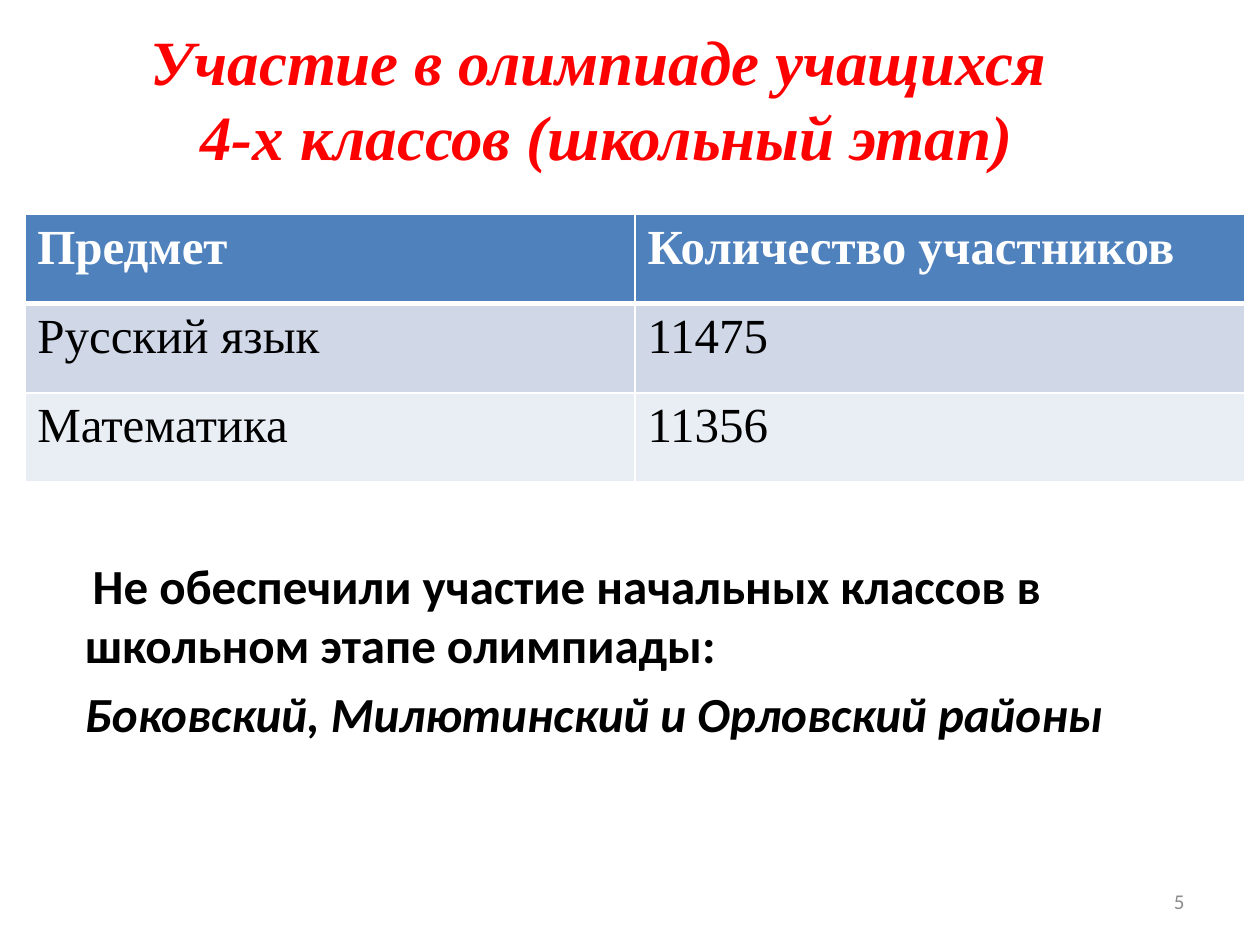
from lxml import etree
from pptx import Presentation
from pptx.dml.color import RGBColor
from pptx.enum.text import MSO_ANCHOR, PP_ALIGN
from pptx.oxml.ns import qn
from pptx.util import Cm, Pt

MIDDLE = MSO_ANCHOR.MIDDLE
CENTER, RIGHT = PP_ALIGN.CENTER, PP_ALIGN.RIGHT
RED = RGBColor(0xFF, 0x00, 0x00)
WHITE = RGBColor(0xFF, 0xFF, 0xFF)
BLACK = RGBColor(0x00, 0x00, 0x00)
GRAY = RGBColor(0x8C, 0x8C, 0x8C)
BLUE = RGBColor(0x4F, 0x81, 0xBD)
BAND = RGBColor(0xD0, 0xD8, 0xE8)
PALE = RGBColor(0xE9, 0xED, 0xF4)
SERIF, SANS = "Times New Roman", "Calibri"


def style(para, name, size, color, bold=False, italic=False):
    font = para.font
    font.name, font.size = name, Pt(size)
    font.bold, font.italic = bold, italic
    font.color.rgb = color


def edge(cell, side, width):
    line = etree.SubElement(cell._tc.get_or_add_tcPr(), qn("a:ln" + side), w=str(Pt(width)))
    fill = etree.SubElement(line, qn("a:solidFill"))
    etree.SubElement(fill, qn("a:srgbClr"), val=str(WHITE))


prs = Presentation()
prs.slide_width, prs.slide_height = Cm(25.4), Cm(19.05)
slide = prs.slides.add_slide(prs.slide_layouts[5])
shapes = slide.shapes

title = shapes.title
title.left, title.top, title.width, title.height = Cm(0), Cm(0), Cm(24.13), Cm(3.94)
title.text_frame.text = "Участие в олимпиаде учащихся\v 4-х классов (школьный этап)"
title.text_frame.vertical_anchor = MIDDLE
para = title.text_frame.paragraphs[0]
para.alignment = CENTER
style(para, SERIF, 36, RED, bold=True, italic=True)

note = shapes.add_textbox(Cm(1.46), Cm(11.08), Cm(23.6), Cm(5)).text_frame
note.word_wrap = True
note.text = (
    "Не обеспечили участие начальных классов в школьном этапе олимпиады:\n"
    "Боковский, Милютинский и Орловский районы"
)
first, last = note.paragraphs
style(first, SANS, 28, BLACK, bold=True)
first._p.get_or_add_pPr().set("indent", str(Cm(0.16)))
style(last, SANS, 28, BLACK, bold=True, italic=True)
last.space_before = Pt(5.6)

page = shapes.add_textbox(Cm(18.2), Cm(17.66), Cm(5.93), Cm(1.01)).text_frame
page.word_wrap = True
page.vertical_anchor = MIDDLE
page.text = "5"
page.paragraphs[0].alignment = RIGHT
style(page.paragraphs[0], SANS, 12, GRAY)

rows = [
    ("Предмет", "Количество участников"),
    ("Русский язык", "11475"),
    ("Математика", "11356"),
]
table = shapes.add_table(3, 2, Cm(0.5), Cm(4.32), Cm(24.6), Cm(5.4)).table
for r, (row, fill) in enumerate(zip(rows, (BLUE, BAND, PALE))):
    head = r == 0
    for c, text in enumerate(row):
        cell = table.cell(r, c)
        cell.text = text
        style(cell.text_frame.paragraphs[0], SERIF, 28, WHITE if head else BLACK, bold=head)
        for side in "LRTB":
            thick = (head and side == "B") or (r == 1 and side == "T")
            edge(cell, side, 3 if thick else 1)
        cell.fill.solid()
        cell.fill.fore_color.rgb = fill

prs.save("out.pptx")
